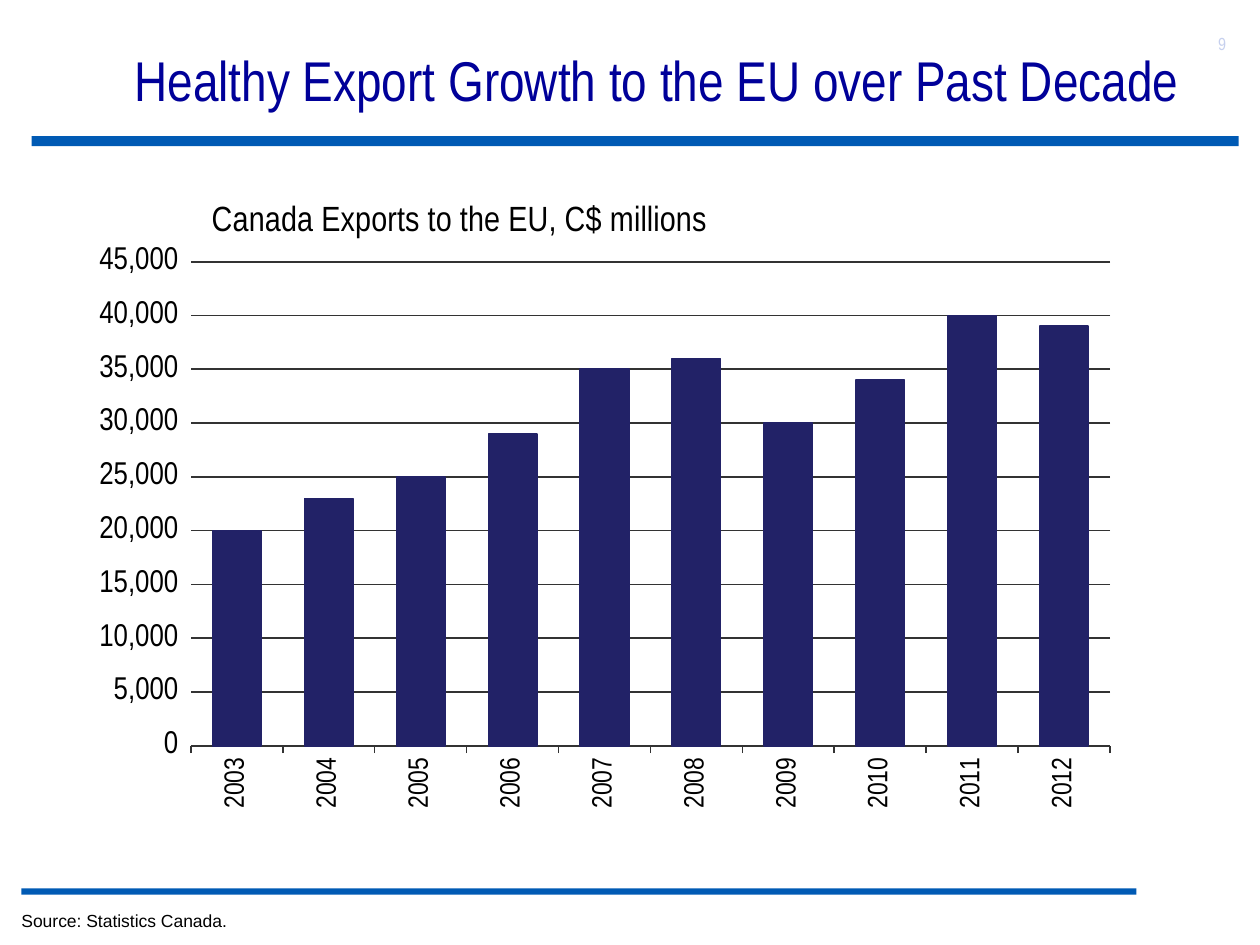
import pptx
import pptx.chart.data
import pptx.dml.color
import pptx.enum.chart
import pptx.enum.text
import pptx.oxml
import pptx.oxml.ns
import pptx.util
from pptx.util import Inches

NARROW = "Arial Narrow"
BLUE, NAVY, GREY, BLACK = "005AB4", "222267", "333333", "000000"
EXPORTS = {
    "2003": 20000, "2004": 23000, "2005": 25000, "2006": 29000, "2007": 35000,
    "2008": 36000, "2009": 30000, "2010": 34000, "2011": 40000, "2012": 39000,
}


def color(hex_string):
    return pptx.dml.color.RGBColor.from_string(hex_string)


def apply(target, values):
    for name, value in values.items():
        setattr(target, name, value)


def format_font(font, size, hex_string, name=NARROW):
    apply(font, {"size": pptx.util.Pt(size), "name": name, "bold": False})
    font.color.rgb = color(hex_string)


def format_line(line, hex_string, width):
    line.color.rgb = color(hex_string)
    line.width = pptx.util.Pt(width)


def add_rule(slide, box):
    rule = slide.shapes.add_shape(pptx.enum.shapes.MSO_SHAPE.RECTANGLE, *map(Inches, box))
    rule.shadow.inherit = False
    rule.fill.solid()
    rule.fill.fore_color.rgb = color(BLUE)
    rule.line.fill.background()


def add_title(slide, box, text):
    title = slide.shapes.title
    apply(title, dict(zip(("left", "top", "width", "height"), map(Inches, box))))
    frame = title.text_frame
    frame.text = text
    apply(frame, {
        "word_wrap": True,
        "auto_size": pptx.enum.text.MSO_AUTO_SIZE.NONE,
        "vertical_anchor": pptx.enum.text.MSO_ANCHOR.MIDDLE,
    })
    paragraph = frame.paragraphs[0]
    paragraph.alignment = pptx.enum.text.PP_ALIGN.CENTER
    format_font(paragraph.font, 32, "000099")


def add_label(slide, box, text, font_name, hex_string, inset=0.1):
    frame = slide.shapes.add_textbox(*map(Inches, box)).text_frame
    apply(frame, {"word_wrap": True, "margin_left": Inches(inset)})
    paragraph = frame.paragraphs[0]
    paragraph.text = text
    format_font(paragraph.font, 10, hex_string, font_name)


def set_layout(parent, index, values):
    for old in parent.findall(pptx.oxml.ns.qn("c:layout")):
        parent.remove(old)
    parts = "".join(f'<c:{name} val="{value}"/>' for name, value in values.items())
    parent.insert(index, pptx.oxml.parse_xml(
        f'<c:layout {pptx.oxml.ns.nsdecls("c")}>'
        f"<c:manualLayout>{parts}</c:manualLayout></c:layout>"))


def format_axes(chart):
    ticks = pptx.enum.chart.XL_TICK_MARK
    years, millions = chart.category_axis, chart.value_axis
    for axis, size, number_format in ((years, 16, "0"), (millions, 18, "#,##0")):
        apply(axis, {"major_tick_mark": ticks.OUTSIDE, "minor_tick_mark": ticks.NONE})
        apply(axis.tick_labels, {
            "number_format": number_format, "number_format_is_linked": False})
        format_font(axis.tick_labels.font, size, BLACK)
    years.tick_label_position = pptx.enum.chart.XL_TICK_LABEL_POSITION.LOW
    format_line(years.format.line, GREY, 0.95)
    apply(millions, {"minimum_scale": 0, "maximum_scale": 45000,
                     "major_unit": 5000, "has_major_gridlines": True})
    millions.format.line.fill.background()
    format_line(millions.major_gridlines.format.line, GREY, 0.95)
    year_text = chart.element.xpath(".//c:catAx/c:txPr/a:bodyPr")[0]
    year_text.set("rot", "-5400000")
    year_text.set("vert", "horz")


def add_export_chart(slide, box, title):
    data = pptx.chart.data.CategoryChartData(number_format="#,##0")
    data.categories = list(EXPORTS)
    data.add_series("Series 1", list(EXPORTS.values()))
    chart = slide.shapes.add_chart(
        pptx.enum.chart.XL_CHART_TYPE.COLUMN_CLUSTERED, *map(Inches, box), data).chart
    format_font(chart.font, 21.6, BLACK)
    chart.has_legend = False

    heading = chart.chart_title.text_frame
    heading.text = title
    format_font(heading.paragraphs[0].runs[0].font, 20, BLACK)
    set_layout(chart.element.xpath("./c:chart/c:title")[0], 1,
               {"xMode": "edge", "yMode": "edge", "x": 0.11, "y": 0.02})
    set_layout(chart.element.xpath("./c:chart/c:plotArea")[0], 0,
               {"layoutTarget": "inner", "xMode": "edge", "yMode": "edge",
                "x": 0.097, "y": 0.123, "w": 0.819, "h": 0.74})

    format_axes(chart)
    plot = chart.plots[0]
    apply(plot, {"gap_width": 90, "vary_by_categories": False})
    exports = plot.series[0]
    exports.format.fill.solid()
    exports.format.fill.fore_color.rgb = color(NAVY)
    format_line(exports.format.line, NAVY, 1)


def main():
    deck = pptx.Presentation()
    apply(deck, {"slide_width": Inches(10), "slide_height": Inches(7.5)})
    slide = deck.slides.add_slide(deck.slide_layouts.get_by_name("Title Only"))
    for rule_box in ((0.25, 1.08, 9.58, 0.08), (0.17, 7.05, 8.85, 0.05)):
        add_rule(slide, rule_box)
    add_title(slide, (0.67, 0.17, 9.09, 0.92),
              "Healthy Export Growth to the EU over Past Decade")
    add_label(slide, (0, 7.17, 6.82, 0.27), "Source: Statistics Canada.",
              "Arial", BLACK, inset=0.17)
    add_export_chart(slide, (0.65, 1.44, 8.91, 5.19),
                     "Canada Exports to the EU, C$ millions")
    add_label(slide, (9.57, 0.21, 0.43, 0.5), "9", NARROW, "C6D0EE")
    deck.save("out.pptx")


if __name__ == "__main__":
    main()
